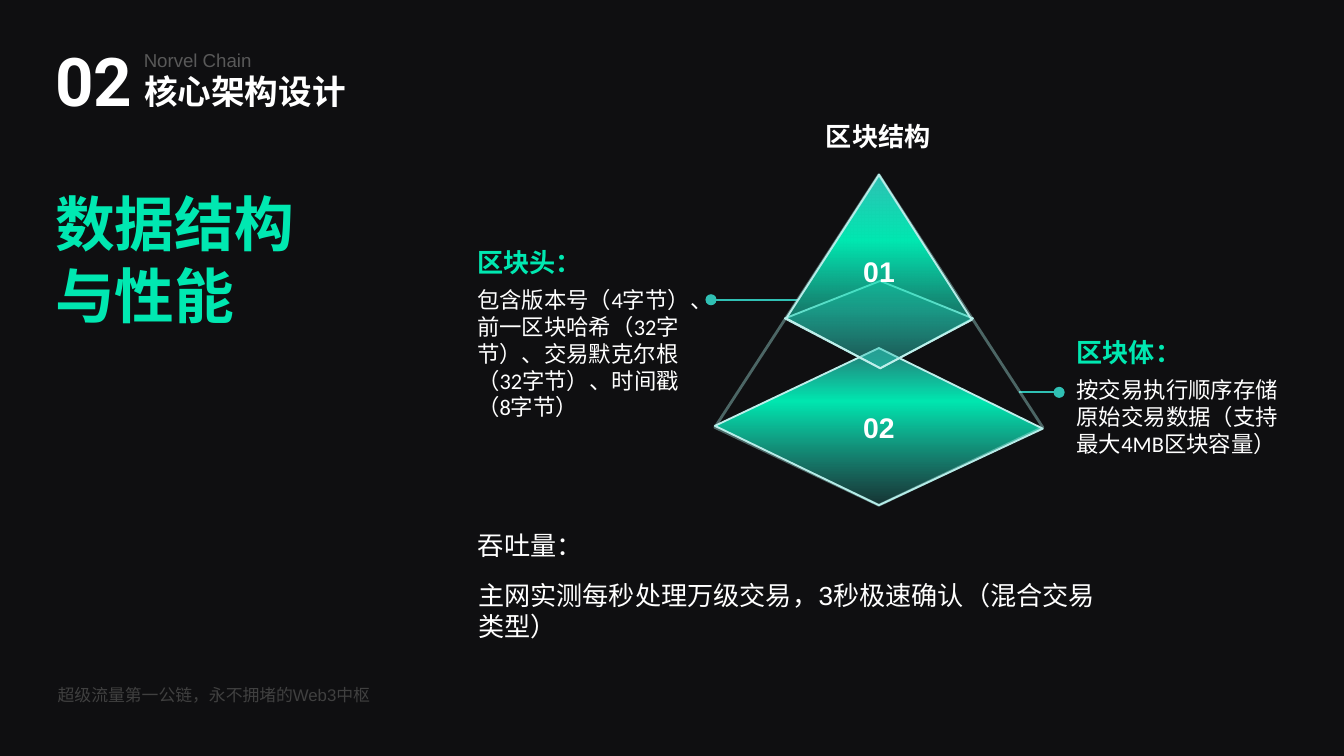
import pptx
import pptx.dml.color
import pptx.enum.shapes
import pptx.enum.text
import pptx.oxml
import pptx.oxml.ns
import pptx.util
from pptx.util import Pt

RGBColor = pptx.dml.color.RGBColor
ALIGN = pptx.enum.text.PP_ALIGN
ANCHOR = pptx.enum.text.MSO_ANCHOR
qn = pptx.oxml.ns.qn

BACKGROUND = RGBColor(0x0F, 0x0F, 0x11)
WHITE = RGBColor(0xFF, 0xFF, 0xFF)
MINT = RGBColor(0x00, 0xE8, 0xB1)
TEAL = RGBColor(0x30, 0xC0, 0xB4)
PALE_TEAL = RGBColor(0xBE, 0xEF, 0xEB)
OUTLINE_TEAL = RGBColor(0xA9, 0xE9, 0xE4)
GREY = RGBColor(0x59, 0x59, 0x59)
DARK_GREY = RGBColor(0x40, 0x40, 0x40)


def drawing_element(tag, **attributes):
    element = pptx.oxml.parse_xml(f"<a:{tag} {pptx.oxml.ns.nsdecls('a')}/>")
    for name, value in attributes.items():
        element.set(name, str(value))
    return element


def set_opacity(color_element, percent):
    color_element.append(drawing_element("alpha", val=percent * 1000))


def write_text(shape, text, size, font="Arial", color=WHITE, bold=False,
               align=ALIGN.LEFT, anchor=ANCHOR.TOP, inset=True, wrap=True):
    frame = shape.text_frame
    frame.text = text
    frame.word_wrap = wrap
    frame.auto_size = pptx.enum.text.MSO_AUTO_SIZE.NONE
    frame.vertical_anchor = anchor
    frame.margin_left = frame.margin_right = Pt(7.2 if inset else 0)
    frame.margin_top = frame.margin_bottom = Pt(3.6 if inset else 0)
    for paragraph in frame.paragraphs:
        paragraph.alignment = align
        paragraph.font.name = font
        paragraph.font.size = Pt(size)
        paragraph.font.bold = bold
        paragraph.font.color.rgb = color


def add_text(slide, box, text, size, **style):
    write_text(slide.shapes.add_textbox(*map(Pt, box)), text, size, **style)


def set_title(slide, box, text, size):
    title = slide.shapes.title
    title.left, title.top, title.width, title.height = map(Pt, box)
    write_text(title, text, size, bold=True)


def add_callout(slide, left, top, width, heading, body):
    add_text(slide, (left, top, width, 28.8), heading, 14, font="Calibri",
             color=MINT, bold=True, anchor=ANCHOR.BOTTOM, inset=False)
    add_text(slide, (left, top + 33.1, width, 67), body, 12, font="Calibri",
             inset=False)


def add_leader(slide, start_x, end_x, y):
    """Draw a horizontal line that ends in a dot."""
    leader = slide.shapes.add_connector(
        pptx.enum.shapes.MSO_CONNECTOR.STRAIGHT,
        Pt(start_x), Pt(y), Pt(end_x), Pt(y))
    leader.line.color.rgb = TEAL
    leader.line.width = Pt(1)
    leader.line._get_or_add_ln().append(drawing_element("tailEnd", type="oval"))
    leader._element.spPr.append(drawing_element("effectLst"))


def add_facet(slide, corners, line_color=PALE_TEAL, line_width=1):
    points = [(Pt(x), Pt(y)) for x, y in corners]
    builder = slide.shapes.build_freeform(*points[0], scale=1.0)
    builder.add_line_segments(points[1:], close=True)
    facet = builder.convert_to_shape()
    facet.shadow.inherit = False
    facet.fill.background()
    facet.line.color.rgb = line_color
    facet.line.width = Pt(line_width)
    return facet


def fill_upward(facet, stops):
    """Apply a bottom-to-top gradient of (position, colour, opacity) stops."""
    facet.fill.gradient()
    facet.fill.gradient_angle = 90
    stop_list = facet._element.spPr.find(".//" + qn("a:gsLst"))
    for old_stop in list(stop_list):
        stop_list.remove(old_stop)
    for position, color, opacity in stops:
        stop = drawing_element("gs", pos=position * 1000)
        color_element = drawing_element("srgbClr", val=color)
        set_opacity(color_element, opacity)
        stop.append(color_element)
        stop_list.append(stop)


def add_pyramid(slide):
    lower = add_facet(slide, [(383, 228.2), (470.9, 186.5), (558.7, 229.7), (470.9, 270.7)])
    fill_upward(lower, [(0, TEAL, 20), (66, MINT, 100), (100, TEAL, 60)])

    upper_base = add_facet(slide, [(420.5, 170.6), (471.6, 150.5), (521.3, 170.6), (471.6, 197.3)])
    fill_upward(upper_base, [(0, TEAL, 20), (66, TEAL, 35), (100, TEAL, 30)])

    upper = add_facet(slide, [(421.2, 170.6), (470.9, 93.6), (520.6, 171.4), (471.6, 197.3)])
    fill_upward(upper, [(0, TEAL, 20), (66, MINT, 100), (100, TEAL, 100)])

    for facet, number in ((lower, "02"), (upper, "01")):
        write_text(facet, number, 15.2, bold=True, align=ALIGN.CENTER,
                   anchor=ANCHOR.MIDDLE, inset=False, wrap=False)

    outline = add_facet(slide, [(383, 229), (470.9, 93.6), (558.7, 229), (470.9, 270.7)],
                        OUTLINE_TEAL, 1.5)
    set_opacity(outline._element.spPr.find(qn("a:ln")).find(".//" + qn("a:srgbClr")), 40)


def main():
    presentation = pptx.Presentation()
    presentation.slide_width = Pt(720)
    presentation.slide_height = Pt(405)
    slide = presentation.slides.add_slide(presentation.slide_layouts[5])
    slide.background.fill.solid()
    slide.background.fill.fore_color.rgb = BACKGROUND

    add_text(slide, (23.8, 363.5, 670, 18), "超级流量第一公链，永不拥堵的Web3中枢", 9,
             color=DARK_GREY)
    add_text(slide, (22.5, 17.5, 57.5, 51), "02", 36, font="Roboto", bold=True)
    set_title(slide, (70, 34.5, 458, 29), "核心架构设计", 18)
    add_text(slide, (70, 22.5, 282, 19.5), "Norvel Chain", 10, color=GREY)
    add_text(slide, (22.5, 96.5, 281.5, 85), "数据结构\n与性能", 32, color=MINT, bold=True)

    add_leader(slide, 427.7, 380.9, 160.6)
    add_leader(slide, 545.8, 567.4, 210.2)
    add_callout(slide, 255.6, 120.2, 114.5, "区块头：",
                "包含版本号（4字节）、前一区块哈希（32字节）、交易默克尔根（32字节）、时间戳（8字节）")
    add_callout(slide, 576.7, 168.5, 109.4, "区块体：",
                "按交易执行顺序存储原始交易数据（支持最大4MB区块容量）")
    add_pyramid(slide)

    add_text(slide, (249, 306.7, 350, 41),
             "主网实测每秒处理万级交易，3秒极速确认（混合交易类型）", 14)
    add_text(slide, (249, 280, 310, 24.5), "吞吐量：", 14)
    add_text(slide, (395.3, 61.2, 150.5, 24.5), "区块结构", 14, font="Calibri",
             bold=True, align=ALIGN.CENTER)

    presentation.save("out.pptx")


if __name__ == "__main__":
    main()
